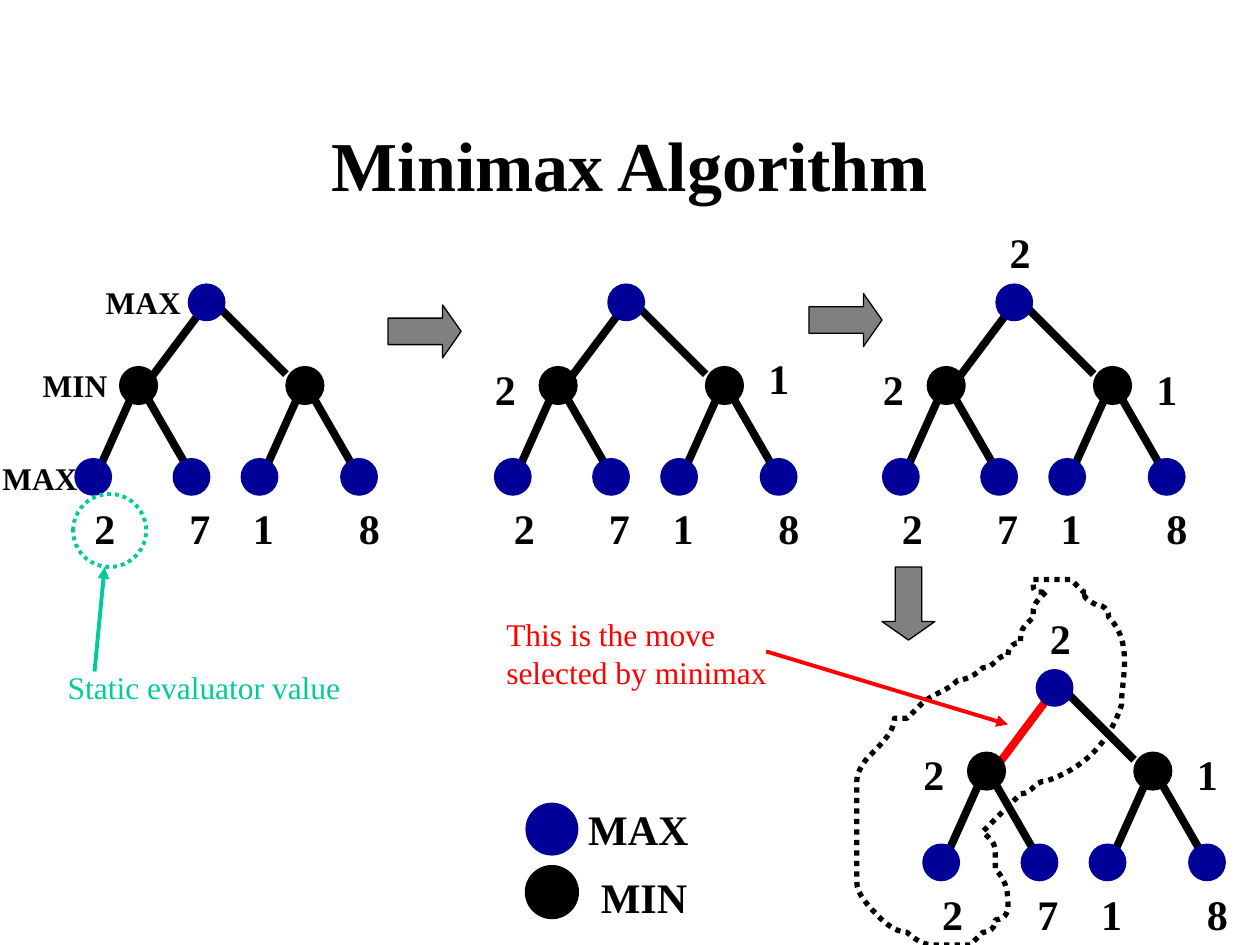
from dataclasses import dataclass

from lxml import etree
from pptx import Presentation
from pptx.dml.color import RGBColor
from pptx.enum.dml import MSO_LINE
from pptx.enum.shapes import MSO_CONNECTOR, MSO_SHAPE
from pptx.enum.text import MSO_ANCHOR, PP_ALIGN
from pptx.oxml.ns import qn
from pptx.util import Inches, Pt

OVAL, ARROW = MSO_SHAPE.OVAL, MSO_SHAPE.RIGHT_ARROW
STRAIGHT = MSO_CONNECTOR.STRAIGHT
DOTS = MSO_LINE.ROUND_DOT
CENTER, LEFT = PP_ALIGN.CENTER, PP_ALIGN.LEFT
MIDDLE = MSO_ANCHOR.MIDDLE
FONT = "Times New Roman"
COLORS = {"black": "000000", "max": "000099", "red": "FF0000",
          "green": "00CC99", "gray": "808080"}

# The page is a grid of 100 columns by 75 rows
WIDTH, HEIGHT = Inches(10), Inches(7.5)
CELL = WIDTH / 100
NODE = 3.0


@dataclass
class Label:
    text: str
    x: float
    y: float
    width: float = 3.7
    height: float = 5
    size: int = 24
    color: str = "black"
    bold: bool = True
    wrap: bool = False
    align: PP_ALIGN = LEFT


@dataclass
class Tree:
    """A game tree, placed by the corner of its root; values are offsets."""
    x: float
    y: float
    values: tuple = ()
    chosen: str = "black"


# Offsets from the root's corner
EDGES = [(-3.6, 8.4, 1.8, 1.2), (7.8, 7.2, 1.8, 1.2),
         (-4.2, 8.4, -7.2, 15.1), (-3.6, 8.4, 0.6, 15.7),
         (9, 8.4, 6, 15.1), (9.6, 8.4, 13.8, 15.7)]
NODES = [(0, 0, "max"), (-5.4, 6.6, "black"), (7.8, 6.6, "black"),
         (-9, 13.85, "max"), (-1.2, 13.85, "max"),
         (4.2, 13.85, "max"), (12.1, 13.85, "max")]
LEAVES = [Label("2", -8.4, 16.9), Label("7", -0.85, 16.9, 2.6, wrap=True),
          Label("1", 4.2, 16.9), Label("8", 12.6, 16.9)]
LEFT_MIN, RIGHT_MIN = ("2", -9.9, 5.85), ("1", 11.8, 5.85)
ROOT_VALUE = ("2", 0.15, -5)

TREES = [
    Tree(14.9, 22.5),
    Tree(48.2, 22.5, (LEFT_MIN, ("1", 11.8, 5))),
    Tree(79, 22.5, (LEFT_MIN, RIGHT_MIN, ROOT_VALUE)),
    Tree(82.2, 53.1, (LEFT_MIN, RIGHT_MIN, ROOT_VALUE), "red"),
]

# Outline round the chosen branch: a start, then two handles and an end per curve
OUTLINE_START = (82.6, 47.2)
OUTLINE_CURVES = [
    (82.4, 48.2, 82.2, 48.5, 81.7, 49.3), (81.4, 49.8, 81, 50.2, 80.7, 50.7),
    (80.3, 51.4, 80.4, 51.7, 79.7, 52.1), (79.1, 52.5, 78.6, 52.9, 78, 53.2),
    (77.3, 53.6, 76.5, 53.8, 75.8, 54.1), (74.8, 54.6, 73.8, 55.3, 72.8, 55.9),
    (72.6, 56.1, 72.1, 56.9, 71.9, 57.1), (71.7, 57.3, 71.5, 57.3, 71.4, 57.4),
    (70.7, 57.8, 69.6, 58.9, 69.1, 59.6), (68.6, 60.3, 68.3, 61.1, 67.9, 61.8),
    (67.7, 62.3, 67.6, 62.8, 67.5, 63.4), (67.5, 65.4, 67.5, 67.5, 67.6, 69.5),
    (67.6, 71, 69, 71.9, 69.9, 72.8), (70.5, 73.4, 70.9, 73.9, 71.7, 74.1),
    (72.3, 74.5, 73, 74.6, 73.8, 74.8), (74.8, 74.8, 75.8, 74.8, 76.9, 74.7),
    (77.2, 74.7, 77.7, 74.5, 77.7, 74.5), (78.3, 74.3, 78.7, 73.8, 79, 73.3),
    (79.2, 73.1, 79.3, 73, 79.4, 72.8), (79.5, 72.7, 79.6, 72.5, 79.6, 72.5),
    (79.9, 71.3, 79.9, 70.2, 79.3, 69.2), (79.2, 68.7, 79, 68.3, 78.9, 67.8),
    (78.8, 67.3, 78.7, 66.8, 78.5, 66.3), (78.5, 66, 78.5, 65.6, 78.6, 65.3),
    (78.7, 65, 78.9, 64.8, 79, 64.6), (79.7, 63.7, 80.5, 63.5, 81.4, 62.9),
    (81.9, 62.6, 82.4, 62.3, 83, 62.2), (85.6, 60.9, 87.5, 58.7, 88.7, 56.2),
    (89.2, 54, 89.5, 50.8, 88, 48.8), (87.8, 48.2, 87.3, 47.9, 86.8, 47.6),
    (85.4, 46.7, 86.6, 47.4, 85.9, 46.8), (85.6, 46.6, 85.2, 46.5, 84.9, 46.3),
    (84, 45.7, 84.6, 46, 84, 45.8), (83.2, 45.9, 82.9, 46, 82.4, 46.5),
    (82.3, 46.8, 82.2, 47, 82.6, 47.2),
]


def cells(*counts: float) -> list[int]:
    return [round(count * CELL) for count in counts]


def rgb(name: str) -> RGBColor:
    return RGBColor.from_string(COLORS[name])


def style(shape, fill: str = "", line: str = "", weight: float = 0.75, dash=None) -> None:
    shape.shadow.inherit = False
    if fill:
        shape.fill.solid()
        shape.fill.fore_color.rgb = rgb(fill)
    else:
        shape.fill.background()
    if line:
        shape.line.color.rgb = rgb(line)
        shape.line.width = Pt(weight)
        shape.line.dash_style = dash
    else:
        shape.line.fill.background()


def add_node(page, x: float, y: float, kind: str, size: float = NODE) -> None:
    node = page.shapes.add_shape(OVAL, *cells(x, y, size, size))
    style(node, kind, "black" if kind == "black" else "")


def add_line(page, ends: tuple, color: str = "black", weight: float = 4.5,
             arrow: bool = False) -> None:
    line = page.shapes.add_connector(STRAIGHT, *cells(*ends))
    line.line.color.rgb = rgb(color)
    line.line.width = Pt(weight)
    if arrow:
        etree.SubElement(line.line._get_or_add_ln(), qn("a:tailEnd"), type="triangle")
    etree.SubElement(line._element.spPr, qn("a:effectLst"))


def add_label(page, label: Label, dx: float = 0, dy: float = 0) -> None:
    box = page.shapes.add_textbox(
        *cells(label.x + dx, label.y + dy, label.width, label.height))
    frame = box.text_frame
    frame.word_wrap = label.wrap
    frame.text = label.text
    for para in frame.paragraphs:
        para.alignment = label.align
        para.font.name, para.font.size = FONT, Pt(label.size)
        para.font.bold = label.bold
        para.font.color.rgb = rgb(label.color)


def add_tree(page, tree: Tree) -> None:
    for index, (x1, y1, x2, y2) in enumerate(EDGES):
        ends = (tree.x + x1, tree.y + y1, tree.x + x2, tree.y + y2)
        add_line(page, ends, tree.chosen if index == 0 else "black")
    for x, y, kind in NODES:
        add_node(page, tree.x + x, tree.y + y, kind)
    for label in LEAVES + [Label(*value) for value in tree.values]:
        add_label(page, label, tree.x, tree.y)


def add_outline(page) -> None:
    points = [curve[i:i + 2] for curve in OUTLINE_CURVES for i in (0, 2, 4)]
    builder = page.shapes.build_freeform(*OUTLINE_START, scale=CELL)
    builder.add_line_segments(points, close=True)
    outline = builder.convert_to_shape()
    style(outline, line="black", weight=3, dash=DOTS)
    # Turn each three straight steps into one curve
    steps = list(outline._element.iter(qn("a:lnTo")))
    for first, second, third in zip(steps[::3], steps[1::3], steps[2::3]):
        curve = etree.Element(qn("a:cubicBezTo"))
        first.addprevious(curve)
        for step in (first, second, third):
            curve.append(step[0])
            step.getparent().remove(step)


def main() -> None:
    deck = Presentation()
    deck.slide_width, deck.slide_height = WIDTH, HEIGHT
    page = deck.slides.add_slide(deck.slide_layouts[5])

    # Title
    title = page.shapes.title
    title.left, title.top, title.width, title.height = cells(7.5, 6.7, 85, 12.5)
    title.text_frame.text = "Minimax Algorithm"
    title.text_frame.vertical_anchor = MIDDLE
    para = title.text_frame.paragraphs[0]
    para.alignment = CENTER
    para.font.name, para.font.size, para.font.bold = FONT, Pt(40), True
    para.font.color.rgb = rgb("black")

    # Trees and the chosen branch
    add_outline(page)
    for tree in TREES:
        add_tree(page, tree)

    # Legend
    add_node(page, 41.7, 63.7, "max", 4.2)
    add_node(page, 41.7, 68.7, "black", 4.2)
    add_label(page, Label("MAX", 45.7, 63.3, 10))
    add_label(page, Label("MIN", 46.7, 68.7, 8.9))

    # Notes with their pointers
    add_label(page, Label("This is the move\nselected by minimax", 39.2, 48.3, 22.7, 7,
                          18, "red", False))
    add_line(page, (60.8, 51.7, 80, 57.5), "red", 2.25, True)
    ring = page.shapes.add_shape(OVAL, *cells(5.8, 39.2, 5.8, 5.8))
    style(ring, line="green", weight=2.25, dash=DOTS)
    add_label(page, Label("Static evaluator value", 3.3, 52.5, 25.8, 4,
                          18, "green", False, True, CENTER))
    add_line(page, (7.5, 53.3, 8.3, 45), "green", 2.25, True)

    # Arrows from step to step
    for x, y, turn in ((30.8, 24.2, 0), (64.2, 23.3, 0), (69.2, 45.8, 90)):
        arrow = page.shapes.add_shape(ARROW, *cells(x, y, 5.8, 4.2))
        arrow.adjustments[0], arrow.adjustments[1] = 0.5, 0.35
        arrow.rotation = turn
        style(arrow, "gray", "black")

    # Level names of the first tree
    for name, x, y, width in (("MAX", 7.4, 22, 8.1), ("MIN", 2.4, 28.6, 7.2),
                              ("MAX", -0.8, 35.9, 8.1)):
        add_label(page, Label(name, x, y, width, 4, 18))

    deck.save("out.pptx")


if __name__ == "__main__":
    main()
